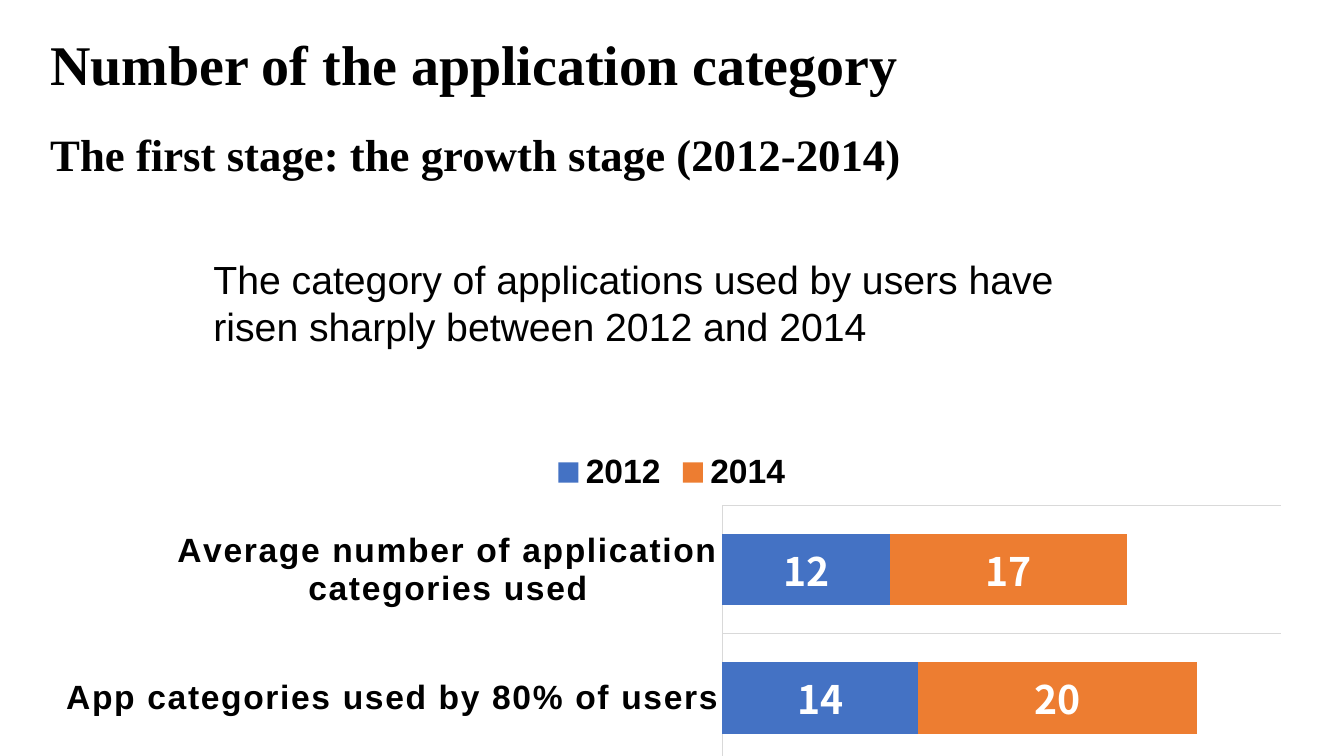
import pptx
import pptx.util
import pptx.chart.data
import pptx.dml.color
import pptx.enum.chart
import pptx.oxml
import pptx.oxml.ns

Pt = pptx.util.Pt
qn = pptx.oxml.ns.qn

# Content: text, place in points, font, size, bold
TEXTS = [
    ("Number of the application category",
     (28.8, 17.3, 648, 55.4), "Times New Roman", 40, True),
    ("The first stage: the growth stage (2012-2014)",
     (28.8, 87.1, 728, 46.1), "Times New Roman", 32, True),
    ("The category of applications used by users have risen sharply "
     "between 2012 and 2014",
     (145.4, 178.6, 669.6, 74.9), "Arial", 28, False),
]
CATS = ["App categories used by 80% of users",
        "Average number of application categories used"]
SERIES = [("2012", (14, 12), "4472C4"), ("2014", (20, 17), "ED7D31")]
PLACE = (26.6, 313.9, 906.5, 235.4)
PLOT = {"x": 0.54, "y": 0.2, "w": 0.44, "h": 0.78}
CJK = "Noto Sans CJK SC"


def paint(color, code):
    color.rgb = pptx.dml.color.RGBColor.from_string(code)


def style(font, name, size, bold, code="000000"):
    font.name, font.size, font.bold = name, Pt(size), bold
    paint(font.color, code)


def rule(line):
    line.width = Pt(0.75)
    paint(line.color, "D9D9D9")


deck = pptx.Presentation()
deck.slide_width, deck.slide_height = Pt(960), Pt(540)
slide = deck.slides.add_slide(deck.slide_layouts[6])

# Headings and statement
for text, place, name, size, bold in TEXTS:
    frame = slide.shapes.add_textbox(*map(Pt, place)).text_frame
    frame.word_wrap = True
    frame.text = text
    style(frame.paragraphs[0].runs[0].font, name, size, bold)

# Stacked bars
data = pptx.chart.data.CategoryChartData()
data.categories = CATS
for name, vals, code in SERIES:
    data.add_series(name, vals)
chart = slide.shapes.add_chart(
    pptx.enum.chart.XL_CHART_TYPE.BAR_STACKED, *map(Pt, PLACE), data).chart
chart.has_title = False
style(chart.font, CJK, 10, False)
plot = chart.plots[0]
plot.gap_width, plot.overlap, plot.vary_by_categories = 79, 100, False
for bar, (name, vals, code) in zip(plot.series, SERIES):
    bar.format.fill.solid()
    paint(bar.format.fill.fore_color, code)
    labels = bar.data_labels
    labels.show_value = True
    labels.position = pptx.enum.chart.XL_LABEL_POSITION.CENTER
    style(labels.font, CJK, 28, True, "FFFFFF")

# Axes and legend
cat = chart.category_axis
cat.major_tick_mark = pptx.enum.chart.XL_TICK_MARK.NONE
cat.has_major_gridlines = True
rule(cat.format.line)
rule(cat.major_gridlines.format.line)
style(cat.tick_labels.font, "Arial", 24, True)
for props in chart.element.xpath(".//c:catAx/c:txPr//a:defRPr"):
    props.set("spc", "120")
val = chart.value_axis
val.minimum_scale, val.maximum_scale = 0, 40
val.has_major_gridlines = False
val.visible = False
chart.has_legend = True
chart.legend.position = pptx.enum.chart.XL_LEGEND_POSITION.TOP
chart.legend.include_in_layout = False
style(chart.legend.font, "Arial", 24, True)

# Fixed plot area
area = chart.element.xpath(".//c:plotArea")[0]
for old in area.findall(qn("c:layout")):
    area.remove(old)
marks = [("layoutTarget", "inner"), ("xMode", "edge"), ("yMode", "edge")]
marks += PLOT.items()
inner = "".join(f'<c:{tag} val="{item}"/>' for tag, item in marks)
area.insert(0, pptx.oxml.parse_xml(
    f'<c:layout {pptx.oxml.ns.nsdecls("c")}>'
    f'<c:manualLayout>{inner}</c:manualLayout></c:layout>'))

deck.save("out.pptx")
